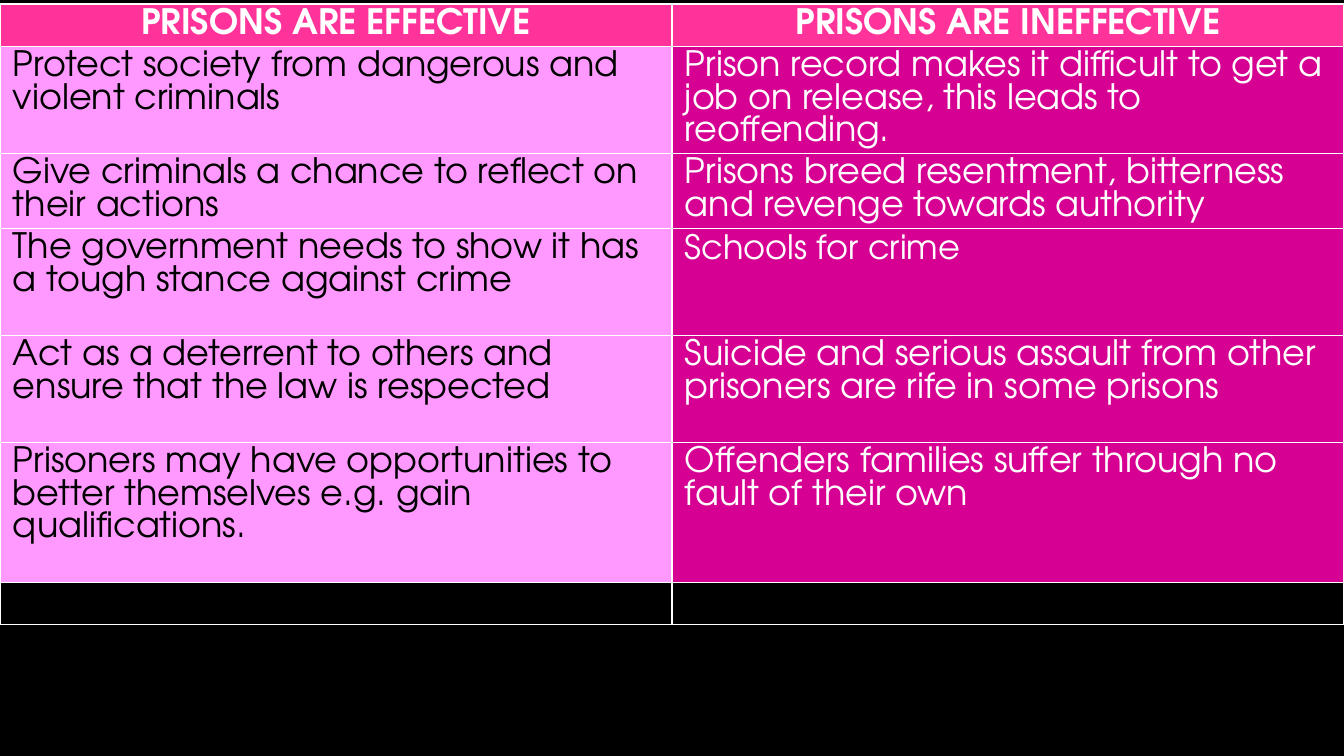
"""Build a slide that weighs up whether prisons are effective."""
from lxml.etree import SubElement as Sub
from pptx import Presentation
from pptx.dml.color import RGBColor as Rgb
from pptx.enum.text import MSO_ANCHOR as Anchor, PP_ALIGN as Align
from pptx.oxml.ns import qn
from pptx.util import Pt

THEME = {
    "font": "TeX Gyre Adventor", "size": 25, "small": 24, "lead": 23.1,
    "back": "000000", "head": "FF3399", "line": "FFFFFF",
    "fills": ("FF99FF", "D60093"), "inks": ("000000", "FFFFFF"),
}
ROWS = [
    (42, "PRISONS ARE EFFECTIVE", "PRISONS ARE INEFFECTIVE"),
    (107, "Protect society from dangerous and violent criminals",
     "Prison record makes it difficult to get a job on release, this leads to reoffending."),
    (75, "Give criminals a chance to reflect on their actions",
     "Prisons breed resentment, bitterness and revenge towards authority"),
    (107, "The government needs to show it has a tough stance against crime",
     "Schools for crime"),
    (107, "Act as a deterrent to others and ensure that the law is respected",
     "Suicide and serious assault from other prisoners are rife in some prisons"),
    (140, "Prisoners may have opportunities to better themselves e.g. gain qualifications.",
     "Offenders families suffer through no fault of their own"),
    (42, "", ""),
]


def px(n):
    """Turn px into EMU."""
    return round(n * 914400 / 100.8)


def rule(cell):
    """Draw the four borders of a cell."""
    props = cell._tc.get_or_add_tcPr()
    for i, side in enumerate(("lnL", "lnR", "lnT", "lnB")):
        line = Sub(props, qn(f"a:{side}"), w=str(Pt(1)))
        fill = Sub(line, qn("a:solidFill"))
        Sub(fill, qn("a:srgbClr"), val=THEME["line"])
        props.insert(i, line)


deck = Presentation()
deck.slide_width, deck.slide_height = px(1344), px(756)
slide = deck.slides.add_slide(deck.slide_layouts[6])
slide.background.fill.solid()
slide.background.fill.fore_color.rgb = Rgb.from_string(THEME["back"])

high = sum(row[0] for row in ROWS)
grid = slide.shapes.add_table(len(ROWS), 2, 0, px(4), px(1344), px(high)).table
grid.first_row = grid.horz_banding = False

for r, (tall, *texts) in enumerate(ROWS):
    grid.rows[r].height = px(tall)
    head = r == 0
    for c, text in enumerate(texts):
        cell = grid.cell(r, c)
        cell.margin_left = cell.margin_right = px(13)
        cell.margin_top = cell.margin_bottom = px(5)
        cell.vertical_anchor = Anchor.MIDDLE if head else Anchor.TOP
        if text:
            cell.fill.solid()
            cell.fill.fore_color.rgb = Rgb.from_string(
                THEME["head"] if head else THEME["fills"][c])
        else:
            cell.fill.background()
        rule(cell)
        cell.text = text
        para = cell.text_frame.paragraphs[0]
        para.alignment = Align.CENTER if head else Align.LEFT
        para.line_spacing = Pt(THEME["lead"])
        font = para.font
        font.name, font.bold = THEME["font"], head
        font.size = Pt(THEME["small" if text == "Schools for crime" else "size"])
        font.color.rgb = Rgb.from_string(THEME["line"] if head else THEME["inks"][c])

deck.save("out.pptx")
